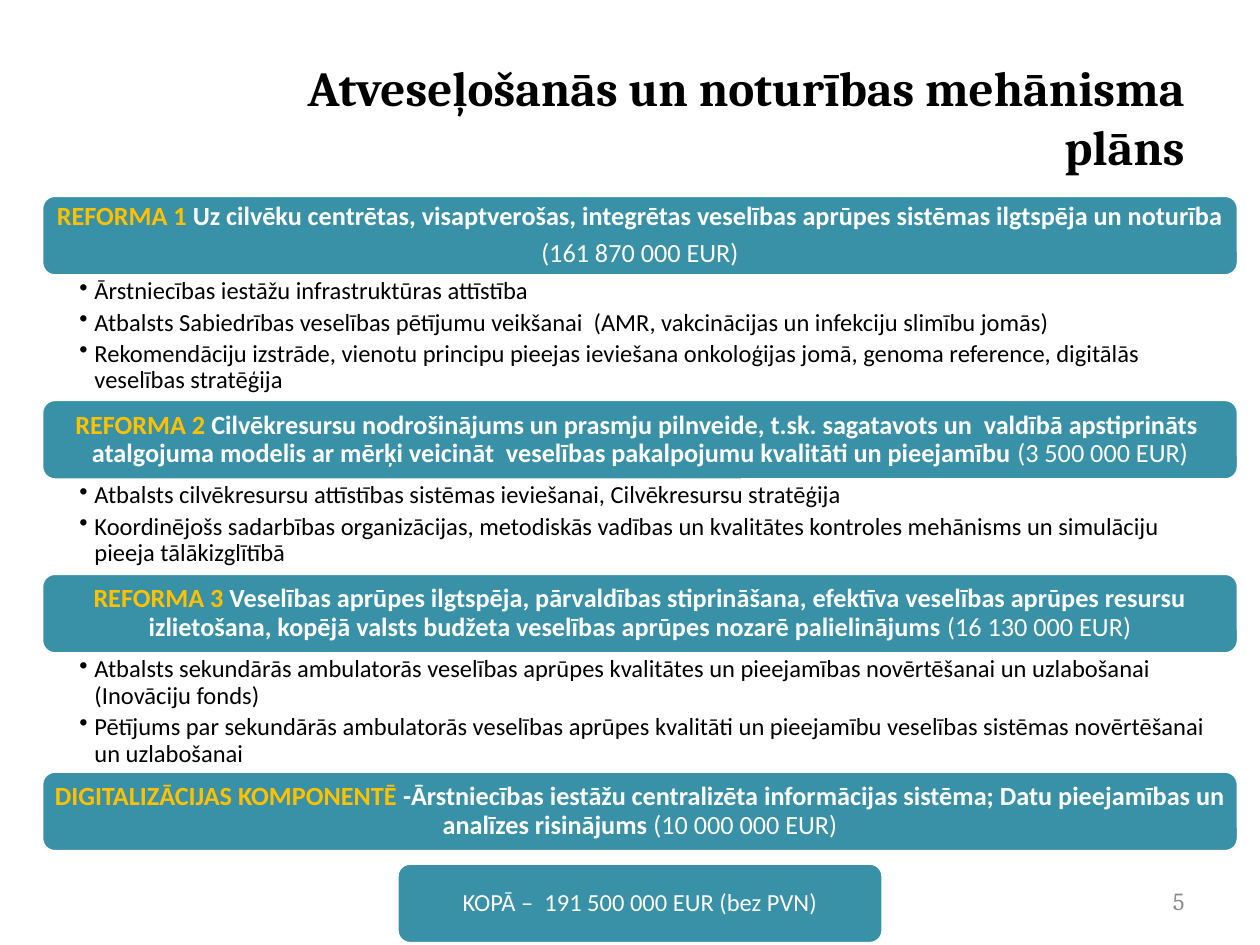
import pptx
import pptx.util
import pptx.dml.color
import pptx.enum.shapes
import pptx.enum.text
import pptx.oxml.ns
import lxml.etree

Inches = pptx.util.Inches
Pt = pptx.util.Pt
ALIGN = pptx.enum.text.PP_ALIGN
ANCHOR = pptx.enum.text.MSO_ANCHOR

TITLE = "Atveseļošanās un noturības mehānisma plāns"
PAGE_NUMBER = "5"
TOTAL = "KOPĀ –  191 500 000 EUR (bez PVN)"

# Each section: label, heading, amount, amount on its own line, list height, actions
SECTIONS = [
    ("REFORMA 1 ",
     "Uz cilvēku centrētas, visaptverošas, integrētas veselības aprūpes sistēmas ilgtspēja un noturība",
     "(161 870 000 EUR)", True, 0.98,
     ["Ārstniecības iestāžu infrastruktūras attīstība",
      "Atbalsts Sabiedrības veselības pētījumu veikšanai  (AMR, vakcinācijas un infekciju slimību jomās)",
      "Rekomendāciju izstrāde, vienotu principu pieejas ieviešana onkoloģijas jomā, genoma reference, "
      "digitālās veselības stratēģija"]),
    ("REFORMA 2 ",
     "Cilvēkresursu nodrošinājums un prasmju pilnveide, t.sk. sagatavots un  valdībā apstiprināts  "
     "atalgojuma modelis ar mērķi veicināt  veselības pakalpojumu kvalitāti un pieejamību ",
     "(3 500 000 EUR)", False, 0.74,
     ["Atbalsts cilvēkresursu attīstības sistēmas ieviešanai, Cilvēkresursu stratēģija",
      "Koordinējošs sadarbības organizācijas, metodiskās vadības un kvalitātes kontroles mehānisms un "
      "simulāciju pieeja tālākizglītībā"]),
    ("REFORMA 3 ",
     "Veselības aprūpes ilgtspēja, pārvaldības stiprināšana, efektīva veselības aprūpes resursu "
     "izlietošana, kopējā valsts budžeta veselības aprūpes nozarē palielinājums ",
     "(16 130 000 EUR)", False, 0.93,
     ["Atbalsts sekundārās ambulatorās veselības aprūpes kvalitātes un pieejamības novērtēšanai un "
      "uzlabošanai (Inovāciju fonds)",
      "Pētījums par sekundārās ambulatorās veselības aprūpes kvalitāti un pieejamību veselības sistēmas "
      "novērtēšanai un uzlabošanai"]),
    ("DIGITALIZĀCIJAS KOMPONENTĒ ",
     "-Ārstniecības iestāžu centralizēta informācijas sistēma; Datu pieejamības un analīzes risinājums ",
     "(10 000 000 EUR)", False, 0, []),
]

THEME = {
    "bar": "3891A7",
    "outline": "FFFFFF",
    "title": {"name": "Cambria", "size": 28, "bold": True, "color": "000000"},
    "page": {"name": "Cambria", "size": 14, "bold": False, "color": "8C8C8C"},
    "label": {"name": "Calibri", "size": 15, "bold": True, "color": "FFC000"},
    "heading": {"name": "Calibri", "size": 15, "bold": True, "color": "FFFFFF"},
    "amount": {"name": "Calibri", "size": 15, "bold": False, "color": "FFFFFF"},
    "action": {"name": "Calibri", "size": 14, "bold": False, "color": "000000"},
    "total": {"name": "Calibri", "size": 14, "bold": False, "color": "FFFFFF"},
}

LEFT, TOP, WIDTH = 0.33, 1.55, 9.5
BAR_HEIGHT = 0.64
TOTAL_WIDTH, TOTAL_GAP = 3.86, 0.09


def color(value):
    return pptx.dml.color.RGBColor.from_string(value)


def fill_text(shape, paragraphs, margins, anchor, paragraph_format, bulleted=False):
    """Write paragraphs, each a list of (text, theme style) runs."""
    frame = shape.text_frame
    frame.word_wrap = True
    frame.vertical_anchor = anchor
    for side, margin in zip(("left", "top", "right", "bottom"), margins):
        setattr(frame, f"margin_{side}", Inches(margin))
    for index, runs in enumerate(paragraphs):
        paragraph = frame.add_paragraph() if index else frame.paragraphs[0]
        if bulleted:
            add_bullet(paragraph)
        for attribute, value in paragraph_format.items():
            setattr(paragraph, attribute, value)
        for text, style in runs:
            run = paragraph.add_run()
            run.text = text
            settings = dict(THEME[style])
            run.font.color.rgb = color(settings.pop("color"))
            settings["size"] = Pt(settings["size"])
            for attribute, value in settings.items():
                setattr(run.font, attribute, value)


def add_bullet(paragraph):
    properties = paragraph._p.get_or_add_pPr()
    properties.set("marL", str(Inches(0.12)))
    properties.set("indent", str(-Inches(0.12)))
    bullet = lxml.etree.SubElement(properties, pptx.oxml.ns.qn("a:buChar"))
    bullet.set("char", "•")


def add_text(slide, box, paragraphs, margins, anchor, paragraph_format, bulleted=False):
    shape = slide.shapes.add_textbox(*map(Inches, box))
    fill_text(shape, paragraphs, margins, anchor, paragraph_format, bulleted)


def add_bar(slide, left, top, width, paragraphs):
    bar = slide.shapes.add_shape(
        pptx.enum.shapes.MSO_SHAPE.ROUNDED_RECTANGLE,
        *map(Inches, (left, top, width, BAR_HEIGHT)))
    bar.shadow.inherit = False
    bar.fill.solid()
    bar.fill.fore_color.rgb = color(THEME["bar"])
    bar.line.color.rgb = color(THEME["outline"])
    bar.line.width = Pt(2)
    fill_text(bar, paragraphs, (0.06,) * 4, ANCHOR.MIDDLE,
              {"alignment": ALIGN.CENTER, "line_spacing": 0.9, "space_after": Pt(5.25)})


def main():
    presentation = pptx.Presentation()
    presentation.slide_width, presentation.slide_height = Inches(10), Inches(7.5)
    slide = presentation.slides.add_slide(presentation.slide_layouts[6])

    for box, text, style in (((2, 0.3, 7.5, 1.25), TITLE, "title"),
                             ((7.17, 6.95, 2.33, 0.4), PAGE_NUMBER, "page")):
        add_text(slide, box, [[(text, style)]], (0.1, 0.05, 0.1, 0.05),
                 ANCHOR.MIDDLE, {"alignment": ALIGN.RIGHT})

    top = TOP
    for label, heading, amount, own_line, list_height, actions in SECTIONS:
        lead = [(label, "label"), (heading, "heading")]
        cost = [(amount, "amount")]
        add_bar(slide, LEFT, top, WIDTH, [lead, cost] if own_line else [lead + cost])
        top += BAR_HEIGHT
        if actions:
            add_text(slide, (LEFT, top, WIDTH, list_height),
                     [[(action, "action")] for action in actions],
                     (0.3, 0.02, 0.11, 0.02), ANCHOR.TOP,
                     {"alignment": ALIGN.LEFT, "line_spacing": 0.9, "space_after": Pt(2.8)},
                     bulleted=True)
        top += list_height

    add_bar(slide, LEFT + (WIDTH - TOTAL_WIDTH) / 2, top + TOTAL_GAP, TOTAL_WIDTH,
            [[(TOTAL, "total")]])
    presentation.save("out.pptx")


if __name__ == "__main__":
    main()
